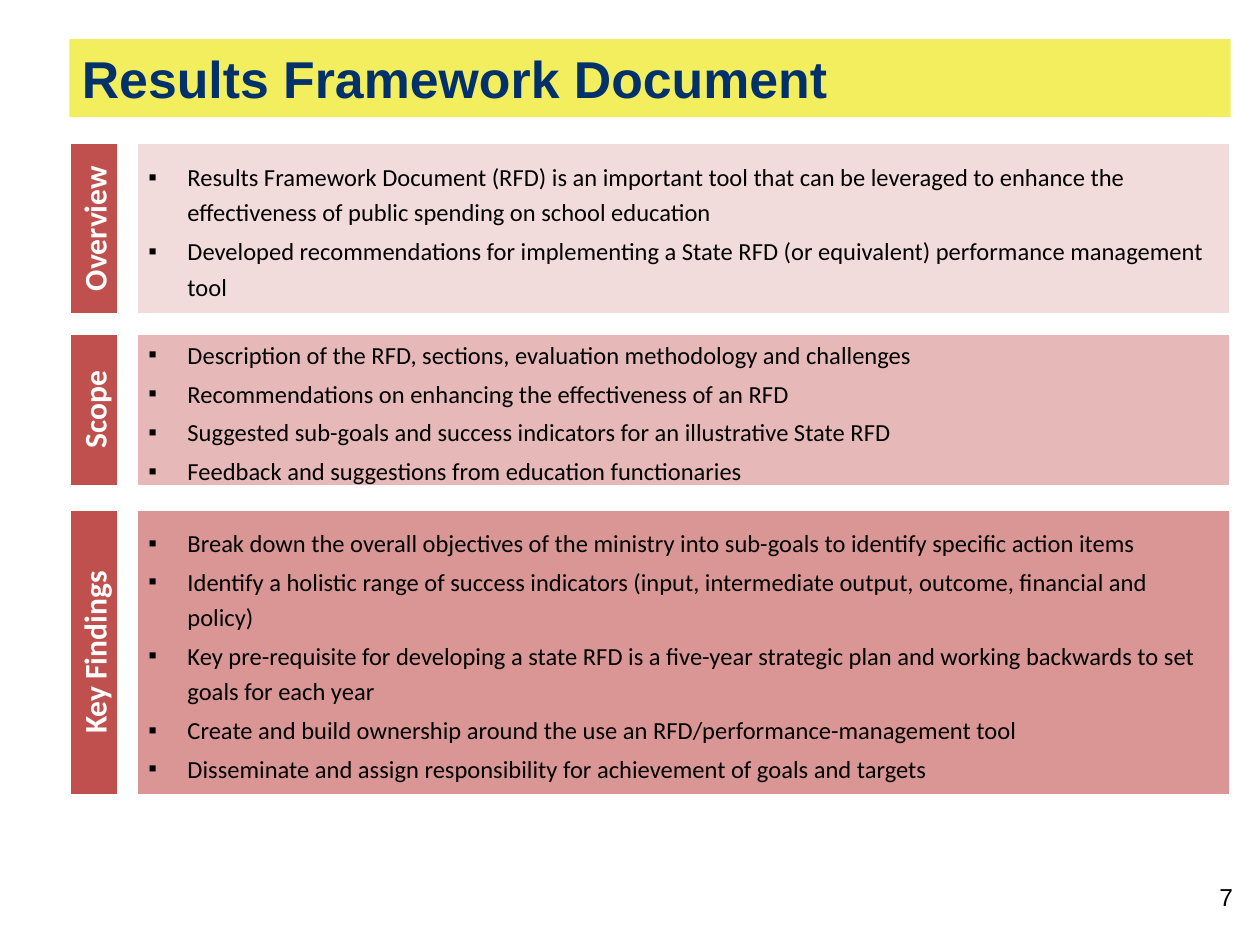
from lxml.etree import SubElement
from pptx import Presentation
from pptx.dml.color import RGBColor
from pptx.enum.shapes import MSO_SHAPE
from pptx.enum.text import MSO_ANCHOR, MSO_AUTO_SIZE, PP_ALIGN
from pptx.oxml.ns import qn
from pptx.util import Cm, Pt

COLORS = {
    "title_bar": "F3EE5E", "title_text": "00316B", "label": "C0504D",
    "overview": "F2DCDB", "scope": "E6B9B8", "findings": "D99694",
    "white": "FFFFFF", "black": "000000",
}
LEFT, WIDTH = 1.4, 23.41
LABEL_WIDTH, BODY_OFFSET = 0.99, 1.34
HANGING = 0.79

SECTIONS = [
    ("Overview", "overview", 2.87, 3.48, [
        "Results Framework Document (RFD) is an important tool that can be leveraged to enhance the effectiveness of public spending on school education",
        "Developed recommendations for implementing a State RFD (or equivalent) performance management tool",
    ]),
    ("Scope", "scope", 6.71, 3.1, [
        "Description of the RFD, sections, evaluation methodology and challenges",
        "Recommendations on enhancing the effectiveness of an RFD",
        "Suggested sub-goals and success indicators for an illustrative State RFD",
        "Feedback and suggestions from education functionaries",
    ]),
    ("Key Findings", "findings", 10.26, 5.79, [
        "Break down the overall objectives of the ministry into sub-goals to identify specific action items",
        "Identify a holistic range of success indicators (input, intermediate output, outcome, financial and policy)",
        "Key pre-requisite for developing a state RFD is a five-year strategic plan and working backwards to set goals for each year",
        "Create and build ownership around the use an RFD/performance-management tool",
        "Disseminate and assign responsibility for achievement of goals and targets",
    ]),
]


def rgb(name):
    return RGBColor.from_string(COLORS[name])


def add_run(p, text, size, color, font="Calibri", bold=False):
    r = p.add_run()
    r.text = text
    r.font.name = font
    r.font.size = Pt(size)
    r.font.bold = bold
    r.font.color.rgb = rgb(color)


def add_panel(s, left, top, width, height, color):
    sp = s.shapes.add_shape(MSO_SHAPE.RECTANGLE, Cm(left), Cm(top), Cm(width), Cm(height))
    sp.shadow.inherit = False
    sp.fill.solid()
    sp.fill.fore_color.rgb = rgb(color)
    sp.line.color.rgb = rgb("white")
    sp.line.width = Pt(2)
    tf = sp.text_frame
    tf.word_wrap = True
    tf.vertical_anchor = MSO_ANCHOR.MIDDLE
    return tf


def add_bullet(p, text):
    p.alignment = PP_ALIGN.LEFT
    p.line_spacing = 1.2
    p.space_before = Pt(2)
    pPr = p._p.get_or_add_pPr()
    pPr.set("marL", str(Cm(HANGING)))
    pPr.set("indent", str(-Cm(HANGING)))
    SubElement(pPr, qn("a:buFont"), typeface="Arial")
    SubElement(pPr, qn("a:buChar"), char="▪")
    add_run(p, text, 14, "black")


def add_title(s, text, left, top, width, height):
    sp = s.shapes.title
    sp.left, sp.top, sp.width, sp.height = Cm(left), Cm(top), Cm(width), Cm(height)
    sp.fill.solid()
    sp.fill.fore_color.rgb = rgb("title_bar")
    tf = sp.text_frame
    tf.auto_size = MSO_AUTO_SIZE.NONE
    tf.word_wrap = True
    tf.vertical_anchor = MSO_ANCHOR.MIDDLE
    tf.margin_left = tf.margin_right = tf.margin_top = tf.margin_bottom = Cm(0.25)
    p = tf.paragraphs[0]
    p.alignment = PP_ALIGN.LEFT
    add_run(p, text, 29.6, "title_text", "Arial", True)


def add_section(s, label, color, bullets, left, top, width, height):
    body = add_panel(s, left + BODY_OFFSET, top, width - BODY_OFFSET, height, color)
    for i, text in enumerate(bullets):
        add_bullet(body.add_paragraph() if i else body.paragraphs[0], text)

    tf = add_panel(s, left, top, LABEL_WIDTH, height, "label")
    tf._txBody.bodyPr.set("vert", "vert270")
    p = tf.paragraphs[0]
    p.alignment = PP_ALIGN.CENTER
    add_run(p, label, 18, "white", bold=True)


def add_page_number(s, number, left, top, width, height):
    tf = s.shapes.add_textbox(Cm(left), Cm(top), Cm(width), Cm(height)).text_frame
    tf.word_wrap = True
    add_run(tf.paragraphs[0], number, 14, "black", "Arial")


def main():
    prs = Presentation()
    prs.slide_width, prs.slide_height = Cm(25.4), Cm(19.05)
    s = prs.slides.add_slide(prs.slide_layouts[5])
    add_title(s, "Results Framework Document", LEFT, 0.79, WIDTH, 1.57)
    for label, color, top, height, bullets in SECTIONS:
        add_section(s, label, color, bullets, LEFT, top, WIDTH, height)
    add_page_number(s, "7", 24.33, 17.65, 1.07, 1.02)
    prs.save("out.pptx")


if __name__ == "__main__":
    main()
